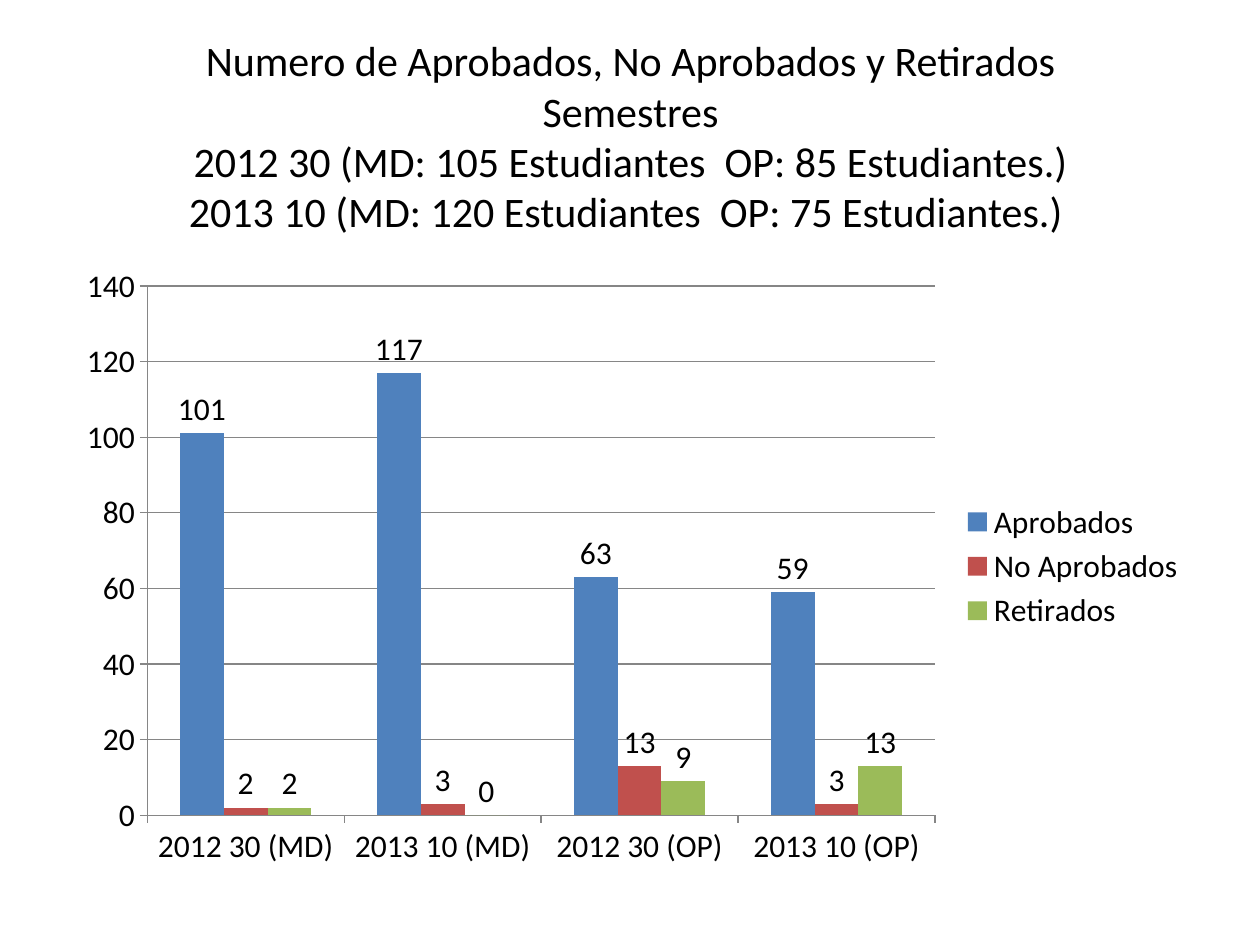
from pptx import Presentation
from pptx.chart.data import CategoryChartData
from pptx.dml.color import RGBColor
from pptx.enum.chart import XL_CHART_TYPE as ChartType
from pptx.enum.chart import XL_LABEL_POSITION as LabelPosition
from pptx.enum.chart import XL_LEGEND_POSITION as LegendPosition
from pptx.enum.chart import XL_TICK_MARK as TickMark
from pptx.enum.text import MSO_ANCHOR as Anchor
from pptx.enum.text import PP_ALIGN as Align
from pptx.util import Inches, Pt

WIDTH, HEIGHT = Inches(10), Inches(7.5)
FONT = "Calibri"
BLACK, GREY = "000000", "868686"

HEADING = [
    "Numero de Aprobados, No Aprobados y Retirados",
    "Semestres",
    "2012 30 (MD: 105 Estudiantes  OP: 85 Estudiantes.)",
    "2013 10 (MD: 120 Estudiantes  OP: 75 Estudiantes.) ",
]
SEMESTERS = ["2012 30 (MD)", "2013 10 (MD)", "2012 30 (OP)", "2013 10 (OP)"]
RESULTS = [
    ("Aprobados", (101, 117, 63, 59), "4F81BD"),
    ("No Aprobados", (2, 3, 13, 3), "C0504D"),
    ("Retirados", (2, 0, 9, 13), "9BBB59"),
]


def color(value):
    return RGBColor.from_string(value)


def style_font(font, size):
    font.name = FONT
    font.size = Pt(size)
    font.bold = False
    font.color.rgb = color(BLACK)


def style_line(line):
    line.color.rgb = color(GREY)
    line.width = Pt(0.75)


def add_heading(slide):
    heading = slide.shapes.title
    heading.left, heading.top = Inches(0.2), Inches(0.21)
    heading.width, heading.height = Inches(9.61), Inches(1.73)
    frame = heading.text_frame
    frame.text = "\v".join(HEADING)
    frame.word_wrap = True
    frame.vertical_anchor = Anchor.MIDDLE
    paragraph = frame.paragraphs[0]
    paragraph.alignment = Align.CENTER
    for run in paragraph.runs:
        style_font(run.font, 24)


def style_axis(axis):
    axis.major_tick_mark = TickMark.OUTSIDE
    axis.minor_tick_mark = TickMark.NONE
    style_line(axis.format.line)


def style_series(series, fill):
    series.format.fill.solid()
    series.format.fill.fore_color.rgb = color(fill)
    series.invert_if_negative = False
    labels = series.data_labels
    labels.show_value = True
    labels.position = LabelPosition.OUTSIDE_END


def add_results_chart(slide):
    data = CategoryChartData()
    data.categories = SEMESTERS
    for name, counts, _ in RESULTS:
        data.add_series(name, counts)
    chart = slide.shapes.add_chart(
        ChartType.COLUMN_CLUSTERED,
        Inches(0.51), Inches(2.02), Inches(9), Inches(4.95), data,
    ).chart
    chart.has_title = False
    style_font(chart.font, 18)

    chart.has_legend = True
    chart.legend.position = LegendPosition.RIGHT
    chart.legend.include_in_layout = False

    style_axis(chart.category_axis)
    counts_axis = chart.value_axis
    style_axis(counts_axis)
    counts_axis.minimum_scale, counts_axis.maximum_scale = 0, 140
    counts_axis.major_unit = 20
    counts_axis.has_major_gridlines = True
    style_line(counts_axis.major_gridlines.format.line)

    plot = chart.plots[0]
    plot.gap_width = 150
    plot.overlap = 0
    plot.vary_by_categories = False
    for series, (_, _, fill) in zip(plot.series, RESULTS):
        style_series(series, fill)


def main():
    deck = Presentation()
    deck.slide_width, deck.slide_height = WIDTH, HEIGHT
    slide = deck.slides.add_slide(deck.slide_layouts.get_by_name("Title Only"))
    add_heading(slide)
    add_results_chart(slide)
    deck.save("out.pptx")


if __name__ == "__main__":
    main()
